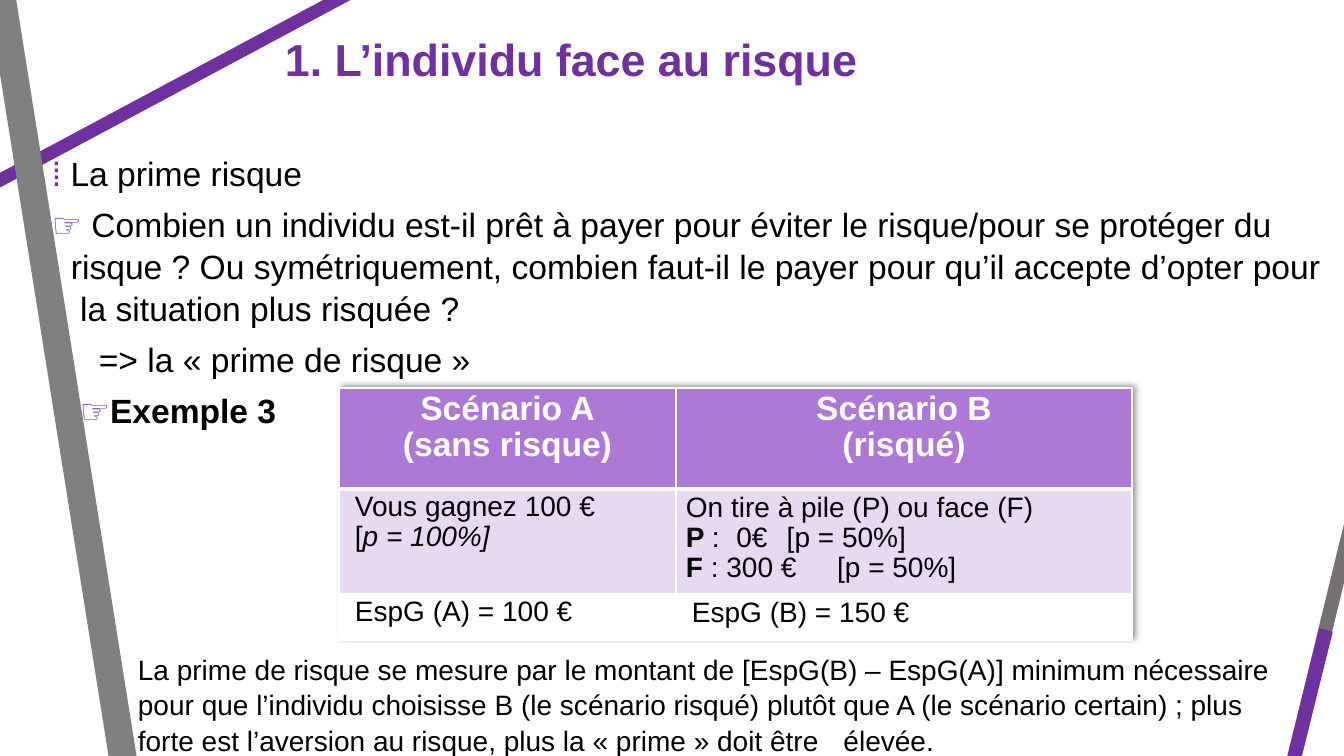
from lxml.etree import SubElement
from pptx import Presentation
from pptx.dml.color import RGBColor
from pptx.enum.shapes import MSO_CONNECTOR
from pptx.enum.text import MSO_AUTO_SIZE, PP_ALIGN
from pptx.oxml.ns import qn
from pptx.util import Emu, Pt

PURPLE, BLACK, WHITE = "7030A0", "000000", "FFFFFF"
HEADER_FILL, SCENARIO_FILL = "AE78D6", "E8D9F3"


def px(length):
    """Turn pixels into EMU."""
    return Emu(round(length * 914400 / 100.8))


def rgb(value):
    """Turn a hex string into a colour."""
    return RGBColor.from_string(value)


def write(paragraph, text, size=24, color=BLACK, bold=False, italic=False):
    """Add formatted text to a paragraph, breaking lines at newlines."""
    for number, line in enumerate(text.split("\n")):
        if number:
            paragraph.add_line_break()
        run = paragraph.add_run()
        run.text = line
        run.font.name = "Arial"
        run.font.size = Pt(size)
        run.font.bold = bold
        run.font.italic = italic
        run.font.color.rgb = rgb(color)


class RiskSlide:
    """Style and elements of the slide on risk."""

    def __init__(self, presentation):
        """Add a blank slide."""
        self.slide = presentation.slides.add_slide(presentation.slide_layouts[6])

    def stripe(self, start, end, color, width):
        """Draw a decorative line."""
        line = self.slide.shapes.add_connector(
            MSO_CONNECTOR.STRAIGHT, *map(px, start + end))
        line.line.color.rgb = rgb(color)
        line.line.width = Pt(width)
        SubElement(line._element.spPr, qn("a:effectLst"))

    def fill_frame(self, frame, paragraphs, spacing, before=0, align=PP_ALIGN.LEFT):
        """Write paragraphs given as (runs, layout) pairs."""
        for number, (runs, layout) in enumerate(paragraphs):
            paragraph = frame.add_paragraph() if number else frame.paragraphs[0]
            paragraph.alignment = align
            paragraph.line_spacing = spacing
            paragraph.space_before = Pt(before)
            properties = paragraph._p.get_or_add_pPr()
            properties.set("marL", str(px(layout.get("margin", 0))))
            properties.set("indent", str(px(layout.get("indent", 0))))
            if "tabs" in layout:
                stops = SubElement(properties, qn("a:tabLst"))
                for stop in layout["tabs"]:
                    SubElement(stops, qn("a:tab"), pos=str(px(stop)), algn="l")
            for text, style in runs:
                write(paragraph, text, **style)

    def text(self, box, paragraphs):
        """Add a wrapping text box."""
        frame = self.slide.shapes.add_textbox(*map(px, box)).text_frame
        frame.word_wrap = True
        frame.auto_size = MSO_AUTO_SIZE.SHAPE_TO_FIT_TEXT
        self.fill_frame(frame, paragraphs, spacing=1.05, before=6)

    def cell(self, cell, paragraphs, fill, margins, borders, align):
        """Fill one table cell and draw its borders."""
        (cell.margin_left, cell.margin_top,
         cell.margin_right, cell.margin_bottom) = map(px, margins)
        self.fill_frame(cell.text_frame, paragraphs, spacing=0.96, align=align)
        properties = cell._tc.get_or_add_tcPr()
        for side, width in borders.items():
            border = SubElement(properties, qn(f"a:ln{side}"), w=str(Pt(width)))
            solid = SubElement(border, qn("a:solidFill"))
            SubElement(solid, qn("a:srgbClr"), val=WHITE)
        cell.fill.solid()
        cell.fill.fore_color.rgb = rgb(fill)

    def table(self, left, top, widths, heights, rows, fills):
        """Add the scenario table with its soft shadow."""
        table = self.slide.shapes.add_table(
            len(rows), len(widths),
            *map(px, (left, top, sum(widths), sum(heights)))).table
        table.horz_banding = False
        shadow = SubElement(
            SubElement(table._tbl.tblPr, qn("a:effectLst")), qn("a:outerShdw"),
            blurRad="50800", dist="38100", dir="18900000", algn="bl", rotWithShape="0")
        tint = SubElement(shadow, qn("a:srgbClr"), val=BLACK)
        SubElement(tint, qn("a:alpha"), val="40000")
        # style-free cells keep the layout explicit
        for column, width in zip(table.columns, widths):
            column.width = px(width)
        for index, (row, height) in enumerate(zip(table.rows, heights)):
            row.height = px(height)
            borders = {"L": 1, "R": 1, "T": 3 if index == 1 else 1,
                       "B": 3 if index == 0 else 1}
            for side, paragraphs in enumerate(rows[index]):
                margins = (0, 5, 0, 0) if index and side else (4, 4, 4, 4)
                align = PP_ALIGN.LEFT if index else PP_ALIGN.CENTER
                self.cell(table.cell(index, side), paragraphs, fills[index],
                          margins, borders, align)


def main():
    """Build the slide and save it."""
    presentation = Presentation()
    presentation.slide_width, presentation.slide_height = px(1344), px(756)
    risk = RiskSlide(presentation)

    risk.stripe((-211, 293), (520, -98), PURPLE, 9.25)
    risk.stripe((0, -14), (127, 784), "808080", 19.75)
    heading = dict(size=32, color=PURPLE, bold=True)
    risk.text((275, 24, 843, 65), [([("1. L’individu face au risque", heading)], {})])
    risk.stripe((1236, 997), (1376, 422), "767171", 10)
    risk.stripe((1228, 1023), (1326, 630), PURPLE, 10)

    bullet, pointer = dict(color=PURPLE), dict(color=PURPLE, bold=True)
    question = (
        "Combien un individu est-il prêt à payer pour éviter le risque/pour se protéger du\n"
        "risque ? Ou symétriquement, combien faut-il le payer pour qu’il accepte d’opter pour\n"
        " la situation plus risquée ?")
    risk.text((42, 146, 1294, 288), [
        ([("⁞", bullet), (" La prime risque", {})], {}),
        ([("☞ ", pointer), (question, {})], dict(margin=19, indent=-19)),
        ([("=> la « prime de risque »", {})], dict(margin=47)),
        ([("☞", pointer), ("Exemple 3", dict(bold=True))], dict(margin=28)),
    ])

    title = dict(color=WHITE, bold=True)
    plain, strong = dict(size=20), dict(size=20, bold=True)
    certain, tossed = dict(margin=12), dict(margin=10)
    headers = [[([(line, title)], {}) for line in lines]
               for lines in (("Scénario A", "(sans risque)"), ("Scénario B", "(risqué)"))]
    gains = [
        [([("Vous gagnez 100 €", plain)], certain),
         ([("[", plain), ("p = 100%]", dict(size=20, italic=True))], certain)],
        [([("On tire à pile (P) ou face (F)", plain)], tossed),
         ([("P ", strong), (":\t0€\t[p = 50%]", plain)], dict(tossed, tabs=(49, 118))),
         ([("F ", strong), (": 300 €\t[p = 50%]", plain)], dict(tossed, tabs=(126,)))],
    ]
    expected = [[([("EspG (A) = 100 €", plain)], certain)],
                [([("EspG (B) = 150 €", plain)], dict(margin=16))]]
    risk.table(339, 388, (337, 456), (101, 105, 46),
               (headers, gains, expected), (HEADER_FILL, SCENARIO_FILL, WHITE))

    conclusion = (
        "La prime de risque se mesure par le montant de [EspG(B) – EspG(A)] minimum "
        "nécessaire pour que l’individu choisisse B (le scénario risqué) plutôt que A "
        "(le scénario certain) ; plus forte est l’aversion au risque, plus la « prime » "
        "doit être\télevée.")
    risk.text((128, 646, 1169, 112), [([(conclusion, plain)], dict(tabs=(703,)))])

    presentation.save("out.pptx")


if __name__ == "__main__":
    main()
